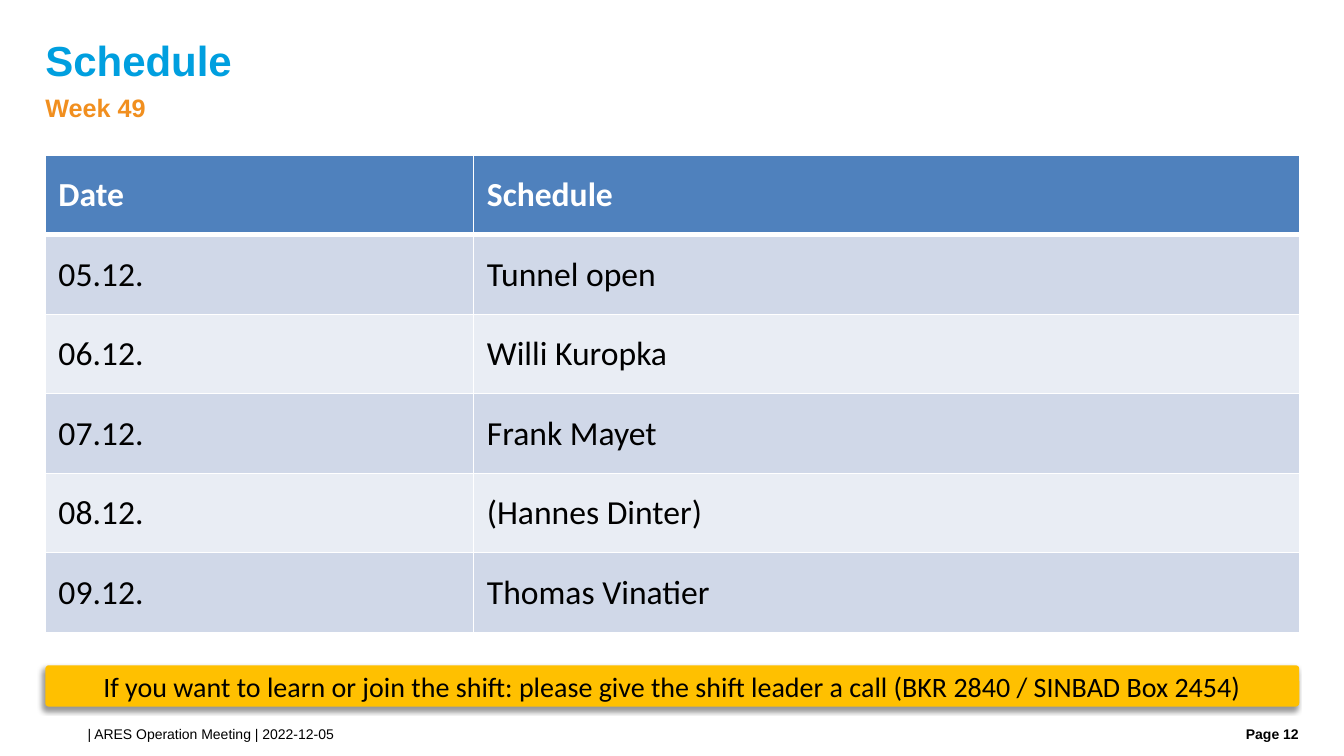
from dataclasses import dataclass

from lxml.etree import SubElement
from pptx import Presentation
from pptx.dml.color import RGBColor
from pptx.enum.shapes import MSO_SHAPE
from pptx.enum.text import MSO_ANCHOR, PP_ALIGN
from pptx.oxml.ns import qn
from pptx.util import Pt


@dataclass(frozen=True)
class Theme:
    heading_font: str = "Arial"
    text_font: str = "Calibri"
    cyan: str = "009FDF"
    orange: str = "F18F1F"
    black: str = "000000"
    white: str = "FFFFFF"
    header: str = "4F81BD"
    bands: tuple = ("D0D8E8", "E9EDF4")
    amber: str = "FFC000"
    title_size: int = 30
    subtitle_size: int = 18
    table_size: int = 24
    notice_size: int = 20
    footer_size: int = 10


theme = Theme()
LEFT, WIDTH = 32.4, 895.7


def write(tf, text, font, size, color, bold=False, align=PP_ALIGN.LEFT):
    p = tf.paragraphs[0]
    p.alignment = align
    r = p.add_run()
    r.text = text
    r.font.name = font
    r.font.size = Pt(size)
    r.font.bold = bold
    r.font.color.rgb = RGBColor.from_string(color)
    return p


def set_frame(sp, left, top, width, height, anchor=MSO_ANCHOR.TOP):
    sp.left, sp.top, sp.width, sp.height = Pt(left), Pt(top), Pt(width), Pt(height)
    tf = sp.text_frame
    tf.margin_left = tf.margin_top = tf.margin_right = tf.margin_bottom = 0
    tf.word_wrap = True
    tf.vertical_anchor = anchor
    return tf


prs = Presentation()
prs.slide_width, prs.slide_height = Pt(960), Pt(540)
s = prs.slides.add_slide(prs.slide_layouts[1])

# Title and subtitle
tf = set_frame(s.shapes.title, LEFT, 27.4, WIDTH, 35.3, MSO_ANCHOR.MIDDLE)
p = write(tf, "Schedule", theme.heading_font, theme.title_size, theme.cyan, True)
p.line_spacing = 0.9

tf = set_frame(s.placeholders[1], LEFT, 64.1, WIDTH, 29.5)
pPr = tf.paragraphs[0]._p.get_or_add_pPr()
pPr.set("marL", "0")
pPr.set("indent", "0")
SubElement(pPr, qn("a:buNone"))
p = write(tf, "Week 49", theme.heading_font, theme.subtitle_size, theme.orange, True)
p.line_spacing = 1.1
p.space_before = Pt(0)

# Schedule table
rows = [
    ("Date", "Schedule"),
    ("05.12.", "Tunnel open"),
    ("06.12.", "Willi Kuropka"),
    ("07.12.", "Frank Mayet"),
    ("08.12.", "(Hannes Dinter)"),
    ("09.12.", "Thomas Vinatier"),
]
table = s.shapes.add_table(len(rows), 2, Pt(LEFT), Pt(111), Pt(WIDTH), Pt(340.8)).table
table.columns[0].width, table.columns[1].width = Pt(306), Pt(WIDTH - 306)
for i, row in enumerate(rows):
    is_header = i == 0
    fill = theme.header if is_header else theme.bands[(i - 1) % 2]
    color = theme.white if is_header else theme.black
    for j, text in enumerate(row):
        cell = table.cell(i, j)
        cell.margin_left = cell.margin_right = Pt(9.4)
        cell.margin_top = cell.margin_bottom = Pt(5)
        cell.vertical_anchor = MSO_ANCHOR.MIDDLE
        tcPr = cell._tc.get_or_add_tcPr()
        for side in "LRTB":
            thick = (i, side) in ((0, "B"), (1, "T"))
            ln = SubElement(tcPr, qn(f"a:ln{side}"), w=str(Pt(4 if thick else 1)))
            SubElement(SubElement(ln, qn("a:solidFill")), qn("a:srgbClr"), val=theme.white)
        cell.fill.solid()
        cell.fill.fore_color.rgb = RGBColor.from_string(fill)
        write(cell.text_frame, text, theme.text_font, theme.table_size, color, is_header)

# Shift notice with a soft shadow
notice = s.shapes.add_shape(MSO_SHAPE.ROUNDED_RECTANGLE, 0, 0, 0, 0)
notice.adjustments[0] = 0.085
notice.fill.solid()
notice.fill.fore_color.rgb = RGBColor.from_string(theme.amber)
notice.line.fill.background()
notice.shadow.inherit = False
effects = notice._element.spPr.find(qn("a:effectLst"))
shadow = SubElement(effects, qn("a:outerShdw"), blurRad=str(Pt(4)), dist=str(Pt(3)),
                    dir=str(135 * 60000), algn="tr", rotWithShape="0")
shade = SubElement(shadow, qn("a:srgbClr"), val=theme.black)
SubElement(shade, qn("a:alpha"), val="40000")
tf = set_frame(notice, LEFT, 475.2, WIDTH, 29.5, MSO_ANCHOR.MIDDLE)
write(tf, "If you want to learn or join the shift: please give the shift leader a call "
      "(BKR 2840 / SINBAD Box 2454)",
      theme.text_font, theme.notice_size, theme.black, align=PP_ALIGN.CENTER)

# Footer
for text, left, width, bold, align in (
    ("| ARES Operation Meeting | 2022-12-05", 62.6, 783.4, False, PP_ALIGN.LEFT),
    ("Page 12", 854.2, 73.4, True, PP_ALIGN.RIGHT),
):
    tf = set_frame(s.shapes.add_textbox(0, 0, 0, 0), left, 518.4, width, 14.4)
    write(tf, text, theme.heading_font, theme.footer_size, theme.black, bold, align)

prs.save("out.pptx")
